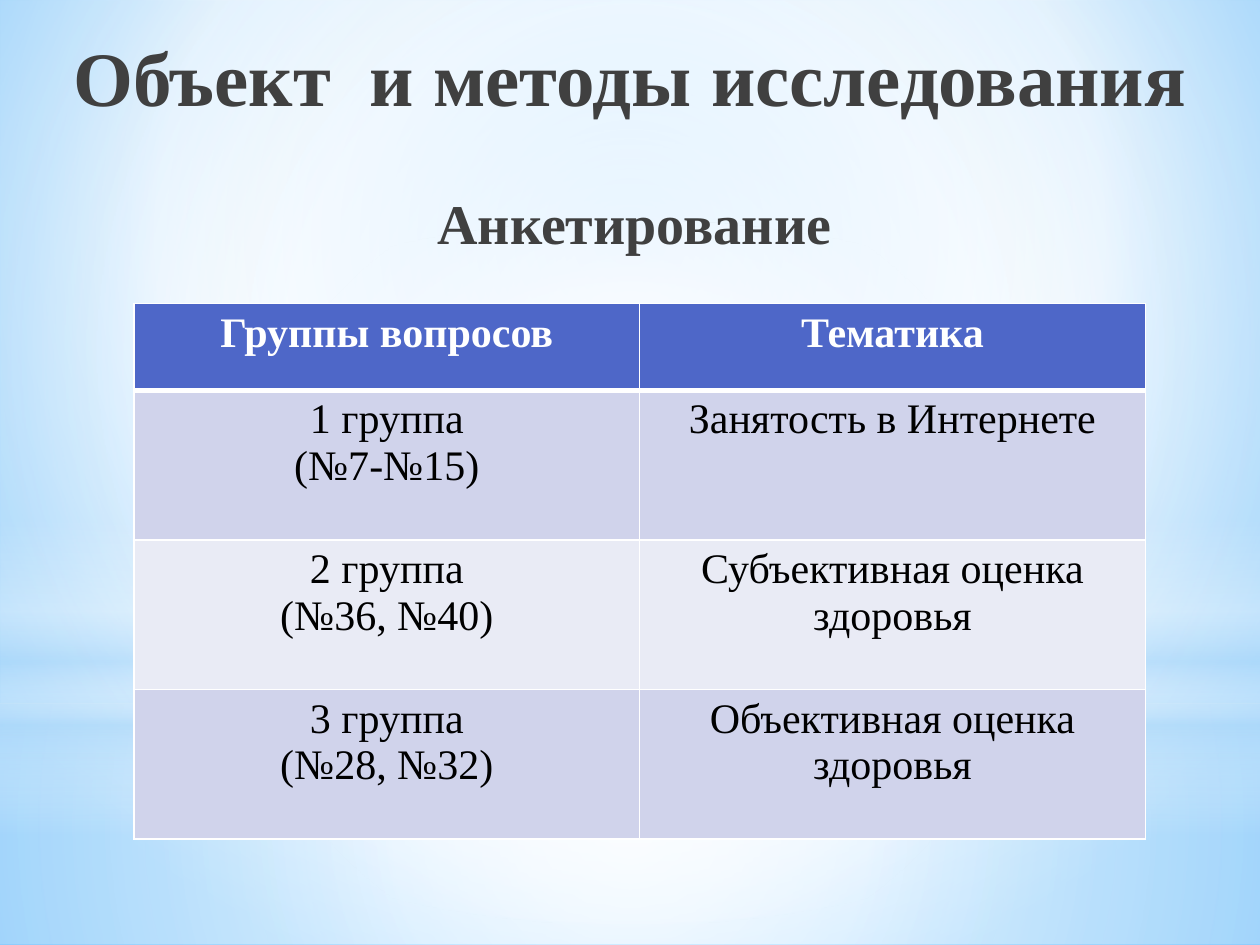
from lxml.etree import SubElement
from pptx import Presentation
from pptx.dml.color import RGBColor
from pptx.enum.shapes import MSO_SHAPE as SHAPE
from pptx.enum.text import MSO_ANCHOR, PP_ALIGN
from pptx.oxml.ns import qn
from pptx.util import Pt

FONT = "Times New Roman"
DARK = RGBColor(0x40, 0x40, 0x40)
WHITE = RGBColor(0xFF, 0xFF, 0xFF)
BLACK = RGBColor(0, 0, 0)
HEADER = RGBColor(0x4E, 0x67, 0xC8)
BANDS = [RGBColor(0xE9, 0xEB, 0xF5), RGBColor(0xD0, 0xD3, 0xEB)]
SKY = RGBColor(0xB4, 0xDC, 0xFA)
SKY_LIGHT = RGBColor(0x9E, 0xD5, 0xFF)
SKY_DEEP = RGBColor(0x5B, 0xB9, 0xFF)

TITLE = "Объект  и методы исследования"
SUBTITLE = "Анкетирование"
ROWS = [
    ("Группы вопросов", "Тематика"),
    ("1 группа\n(№7-№15)", "Занятость в Интернете"),
    ("2 группа\n(№36, №40)", "Субъективная оценка здоровья"),
    ("3 группа\n(№28, №32)", "Объективная оценка здоровья"),
]
COL_WIDTH, HEAD_HEIGHT, ROW_HEIGHT = 289, 49.5, 85.5

# Gradient stops: position %, colour, opacity %
BACKGROUND = [(0, SKY_LIGHT, 100), (60, WHITE, 100), (100, SKY_DEEP, 100)]
CENTRE = (50, 50, 50, 50)
# shape, (left, top, width, height), stops, focus (None for a vertical gradient)
GLOWS = [
    (SHAPE.RECTANGLE, (0, 402, 720, 138),
     [(0, WHITE, 91), (37, WHITE, 76), (100, SKY, 79)], CENTRE),
    (SHAPE.RECTANGLE, (0, 0, 720, 402),
     [(0, WHITE, 89), (48, WHITE, 62), (100, SKY, 79)], CENTRE),
    (SHAPE.RECTANGLE, (0, 297, 720, 180),
     [(0, WHITE, 0), (29, WHITE, 30), (45, SKY, 40), (55, WHITE, 26),
      (65, SKY, 60), (100, WHITE, 0)], None),
    (SHAPE.OVAL, (0, 126, 720, 402), [(0, WHITE, 100), (56, WHITE, 0)], CENTRE),
]


def set_gradient(fill, element, stops, focus):
    """Give fill, which lives inside element, a circular or vertical gradient."""
    fill.gradient()
    grad = next(element.iter(qn("a:gradFill")))
    for child in list(grad):
        grad.remove(child)
    stop_list = SubElement(grad, qn("a:gsLst"))
    for position, colour, opacity in stops:
        stop = SubElement(stop_list, qn("a:gs"), pos=str(position * 1000))
        clr = SubElement(stop, qn("a:srgbClr"), val=str(colour))
        if opacity < 100:
            SubElement(clr, qn("a:alpha"), val=str(opacity * 1000))
    if focus:
        circle = SubElement(grad, qn("a:path"))
        circle.set("path", "circle")
        rect = SubElement(circle, qn("a:fillToRect"))
        for side, value in zip("ltrb", focus):
            rect.set(side, str(value * 1000))
    else:
        SubElement(grad, qn("a:lin"), ang="5400000", scaled="0")


def place(shape, left, top, width, height):
    shape.left, shape.top = Pt(left), Pt(top)
    shape.width, shape.height = Pt(width), Pt(height)


def write(tf, text, size, colour, bold):
    tf.text = text
    tf.word_wrap = True
    for p in tf.paragraphs:
        p.alignment = PP_ALIGN.CENTER
        for r in p.runs:
            r.font.name, r.font.size, r.font.bold = FONT, Pt(size), bold
            r.font.color.rgb = colour


def set_borders(cell, top, bottom):
    """Draw white borders; top and bottom are widths in points."""
    tc_pr = cell._tc.get_or_add_tcPr()
    for tag, width in (("lnL", 1), ("lnR", 1), ("lnT", top), ("lnB", bottom)):
        line = SubElement(tc_pr, qn(f"a:{tag}"), w=str(Pt(width)))
        fill = SubElement(line, qn("a:solidFill"))
        SubElement(fill, qn("a:srgbClr"), val=str(WHITE))


prs = Presentation()
prs.slide_width, prs.slide_height = Pt(720), Pt(540)
s = prs.slides.add_slide(prs.slide_layouts[5])
set_gradient(s.background.fill, s.element, BACKGROUND, (20, 10, 20, 60))

for kind, box, stops, focus in GLOWS:
    sp = s.shapes.add_shape(kind, *map(Pt, box))
    sp.shadow.inherit = False
    sp.line.fill.background()
    set_gradient(sp.fill, sp.element, stops, focus)

title = s.shapes.title
title.element.getparent().append(title.element)  # above the glows
place(title, 20, 9.5, 680.5, 67.5)
write(title.text_frame, TITLE, 44, DARK, True)
title.text_frame.vertical_anchor = MSO_ANCHOR.MIDDLE

subtitle = s.shapes.add_textbox(Pt(31), Pt(100), Pt(669), Pt(244))
write(subtitle.text_frame, SUBTITLE, 32, DARK, True)
subtitle.text_frame.margin_top = Pt(8)
subtitle.text_frame.margin_right = Pt(13)

table = s.shapes.add_table(
    len(ROWS), 2, Pt(76.5), Pt(173.5), Pt(2 * COL_WIDTH),
    Pt(HEAD_HEIGHT + ROW_HEIGHT * (len(ROWS) - 1))).table
for column in table.columns:
    column.width = Pt(COL_WIDTH)
for i, texts in enumerate(ROWS):
    header = i == 0
    table.rows[i].height = Pt(HEAD_HEIGHT if header else ROW_HEIGHT)
    for j, text in enumerate(texts):
        cell = table.cell(i, j)
        write(cell.text_frame, text, 24, WHITE if header else BLACK, header)
        set_borders(cell, top=3 if i == 1 else 1, bottom=3 if header else 1)
        cell.fill.solid()
        cell.fill.fore_color.rgb = HEADER if header else BANDS[i % 2]

prs.save("out.pptx")
